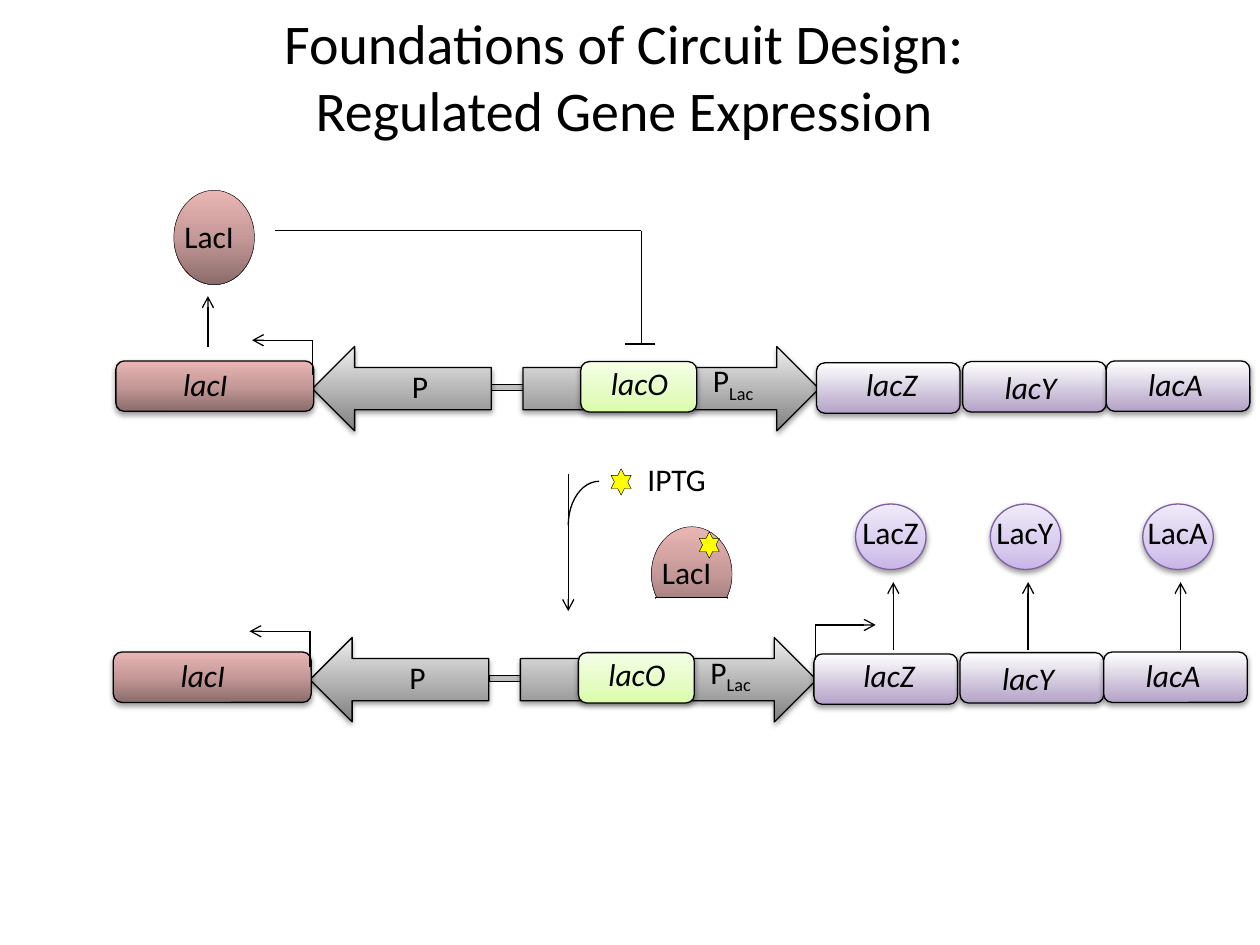
from lxml import etree
from pptx import Presentation
from pptx.dml.color import RGBColor
from pptx.enum.shapes import MSO_CONNECTOR, MSO_SHAPE
from pptx.enum.text import MSO_ANCHOR, MSO_AUTO_SIZE, PP_ALIGN
from pptx.oxml import parse_xml
from pptx.oxml.ns import nsdecls, qn
from pptx.util import Inches, Pt

RECT, ROUND, OVAL = MSO_SHAPE.RECTANGLE, MSO_SHAPE.ROUNDED_RECTANGLE, MSO_SHAPE.OVAL
ARROW, STAR, ARC = MSO_SHAPE.RIGHT_ARROW, MSO_SHAPE.STAR_6_POINT, MSO_SHAPE.ARC
STRAIGHT = MSO_CONNECTOR.STRAIGHT

SLIDE_W, SLIDE_H = Inches(10), Inches(7.5)
UNIT = SLIDE_W / 100  # every length below is a hundredth of the slide width
FONT = "Calibri"
LABEL_H = 4
COLORS = {"ink": "000000", "spacer": "BFBFBF", "iptg": "FFFF00",
          "mask": "FFFFFF", "product_edge": "7D60A0"}
# Gradient stops from top to bottom: (position in percent, colour)
GRADIENTS = {
    "promoter": [(0, "EEEEEE"), (100, "808080")],
    "repressor": [(0, "E9B6B4"), (50, "C59998"), (100, "8A6C6B")],
    "operator": [(0, "F5FFE7"), (65, "E4FCC2"), (100, "DAFDA7")],
    "gene": [(0, "FFFFFF"), (100, "B3A2C7")],
    "product": [(0, "F0EAF9"), (65, "D8CBEE"), (100, "C9B5E8")],
}


def units(*values):
    return [round(value * UNIT) for value in values]


def rgb(name):
    return RGBColor.from_string(COLORS[name])


def paint_gradient(shape, name):
    stops = "".join(f'<a:gs pos="{pos * 1000}"><a:srgbClr val="{color}"/></a:gs>'
                    for pos, color in GRADIENTS[name])
    gradient = parse_xml(f'<a:gradFill {nsdecls("a")} rotWithShape="1"><a:gsLst>{stops}'
                         '</a:gsLst><a:lin ang="5400000" scaled="0"/></a:gradFill>')
    shape.fill.background()
    properties = shape._element.spPr
    properties.replace(properties.find(qn("a:noFill")), gradient)


def cast_shadow(shape):
    shape._element.spPr.find(qn("a:effectLst")).append(parse_xml(
        f'<a:outerShdw {nsdecls("a")} blurRad="40000" dist="20000" dir="5400000" '
        'rotWithShape="0"><a:srgbClr val="000000"><a:alpha val="38000"/></a:srgbClr>'
        '</a:outerShdw>'))


def add_part(slide, kind, box, fill=None, edge="ink", width=0.75, shadow=False, flip=False):
    """Add a preset shape; fill names a gradient, a plain colour or nothing."""
    part = slide.shapes.add_shape(kind, *units(*box))
    part.shadow.inherit = False
    if fill in GRADIENTS:
        paint_gradient(part, fill)
    elif fill:
        part.fill.solid()
        part.fill.fore_color.rgb = rgb(fill)
    else:
        part.fill.background()
    if edge:
        part.line.color.rgb = rgb(edge)
        part.line.width = Pt(width)
    else:
        part.line.fill.background()
    if shadow:
        cast_shadow(part)
    if flip:
        part._element.spPr.find(qn("a:xfrm")).set("flipH", "1")
    return part


def add_line(slide, start, end, arrow=False):
    line = slide.shapes.add_connector(STRAIGHT, *units(*start, *end))
    line.line.color.rgb = rgb("ink")
    line.line.width = Pt(0.75)
    if arrow:
        etree.SubElement(line.line._get_or_add_ln(), qn("a:tailEnd"), type="arrow")
    etree.SubElement(line._element.spPr, qn("a:effectLst"))


def format_run(run, size, italic=False):
    run.font.name = FONT
    run.font.size = Pt(size)
    run.font.italic = italic
    run.font.color.rgb = rgb("ink")


def add_label(slide, text, left, top, width, italic=False, subscript=None):
    frame = slide.shapes.add_textbox(*units(left, top, width, LABEL_H)).text_frame
    frame.word_wrap = False
    frame.auto_size = MSO_AUTO_SIZE.SHAPE_TO_FIT_TEXT
    frame.text = text
    paragraph = frame.paragraphs[0]
    if subscript:
        run = paragraph.add_run()
        run.text = subscript
        run.font._element.set("baseline", "-25000")
    for run in paragraph.runs:
        format_run(run, 18, italic)


def add_title(slide):
    title = slide.shapes.title
    title.left, title.top, title.width, title.height = units(0.8, 0.1, 97.5, 11.8)
    frame = title.text_frame
    frame.text = "Foundations of Circuit Design:\nRegulated Gene Expression"
    frame.word_wrap = True
    frame.auto_size = MSO_AUTO_SIZE.NONE
    frame.vertical_anchor = MSO_ANCHOR.MIDDLE
    for paragraph in frame.paragraphs:
        paragraph.alignment = PP_ALIGN.CENTER
        paragraph.line_spacing = 1
        paragraph.space_before = Pt(0)
        format_run(paragraph.runs[0], 32)


def add_transcription_start(slide, x, y, reach):
    """Bent arrow with its corner at x, y; a negative reach points left."""
    add_line(slide, (x, y), (x + reach, y), arrow=True)
    add_line(slide, (x, y), (x, y + 2.8))


def add_operon(slide, x, y):
    """One row of the lac operon, from the left of lacI and the top of the promoters."""
    add_part(slide, RECT, (x + 29.8, y + 3, 2.5, 0.5), "spacer", width=0.25)
    add_part(slide, ARROW, (x + 32.3, y, 23.5, 6.7), "promoter", shadow=True)
    add_part(slide, ARROW, (x + 15.6, y, 14.2, 6.7), "promoter", shadow=True, flip=True)
    add_label(slide, "P", x + 22.5, y + 1.15, 3.3)
    add_label(slide, "P", x + 46.4, y + 0.7, 5.5, subscript="Lac")
    # name, fill, box left, top, width, label left, top, width
    genes = [
        ("lacI", "repressor", 0, 1.15, 15.7, 4.35, 1, 6.2),
        ("lacO", "operator", 36.9, 1.2, 9.2, 38.3, 0.9, 7.2),
        ("lacZ", "gene", 55.6, 1.3, 11.4, 58.55, 1, 6.7),
        ("lacY", "gene", 67.2, 1.2, 11.4, 69.55, 1.2, 6.7),
        ("lacA", "gene", 78.6, 1.15, 11.4, 80.95, 1, 7),
    ]
    for name, fill, left, top, width, label_left, label_top, label_width in genes:
        add_part(slide, ROUND, (x + left, y + top, width, 4), fill, shadow=True)
        add_label(slide, name, x + label_left, y + label_top, label_width, italic=True)
    add_transcription_start(slide, x + 15.6, y - 0.5, -4.8)


def add_repressor(slide, x, y):
    add_part(slide, OVAL, (x, y, 6.4, 7.5), "repressor", width=0.25)
    add_label(slide, "LacI", x - 0.15, y + 1.6, 6)


def add_iptg(slide, x, y):
    add_part(slide, STAR, (x, y, 1.6, 2.1), "iptg", width=0.25)


def add_repression(slide, x, y):
    """LacI made from its gene, with the blunt line that ends on the operator."""
    add_repressor(slide, x, y)
    add_line(slide, (x + 2.7, y + 12.4), (x + 2.7, y + 8.4), arrow=True)
    corner_x, corner_y, foot_y = x + 37.1, y + 3.2, y + 12.2
    add_line(slide, (corner_x, corner_y), (corner_x, foot_y))
    add_line(slide, (corner_x, corner_y), (x + 8, corner_y))
    add_line(slide, (corner_x + 1.1, foot_y), (corner_x - 1.3, foot_y))


def add_induction(slide, x, y):
    """IPTG joins the downward arrow and binds LacI, which is cut off below."""
    add_line(slide, (x, y), (x, y + 10.9), arrow=True)
    add_part(slide, ARC, (x, y + 0.6, 4.9, 7), flip=True)
    add_iptg(slide, x + 3.4, y - 0.4)
    add_label(slide, "IPTG", x + 5.3, y - 1.6, 6.8)
    add_repressor(slide, x + 6.6, y + 4.2)
    add_iptg(slide, x + 10.4, y + 4.6)
    add_part(slide, RECT, (x + 6.9, y + 9.8, 5.7, 2.8), "mask", width=0.25)
    add_part(slide, RECT, (x + 5.7, y + 9.9, 8.2, 3.2), "mask", edge=None)


def add_product(slide, name, center, y, label_width):
    add_part(slide, OVAL, (center - 2.8, y, 5.6, 5.2), "product",
             edge="product_edge", shadow=True)
    add_line(slide, (center + 0.2, y + 11.6), (center + 0.2, y + 6.2), arrow=True)
    add_label(slide, name, center - label_width / 2, y + 0.2, label_width)


def main():
    deck = Presentation()
    deck.slide_width, deck.slide_height = SLIDE_W, SLIDE_H
    slide = deck.slides.add_slide(deck.slide_layouts[5])
    add_title(slide)
    add_operon(slide, 9.2, 27.5)
    add_repression(slide, 13.8, 15.1)
    add_induction(slide, 45.1, 37.6)
    add_operon(slide, 9, 50.6)
    add_transcription_start(slide, 64.7, 49.6, 4.8)
    for name, center, label_width in [("LacZ", 70.7, 6.5), ("LacY", 81.4, 6.6), ("LacA", 93.5, 6.8)]:
        add_product(slide, name, center, 40, label_width)
    deck.save("out.pptx")


if __name__ == "__main__":
    main()
